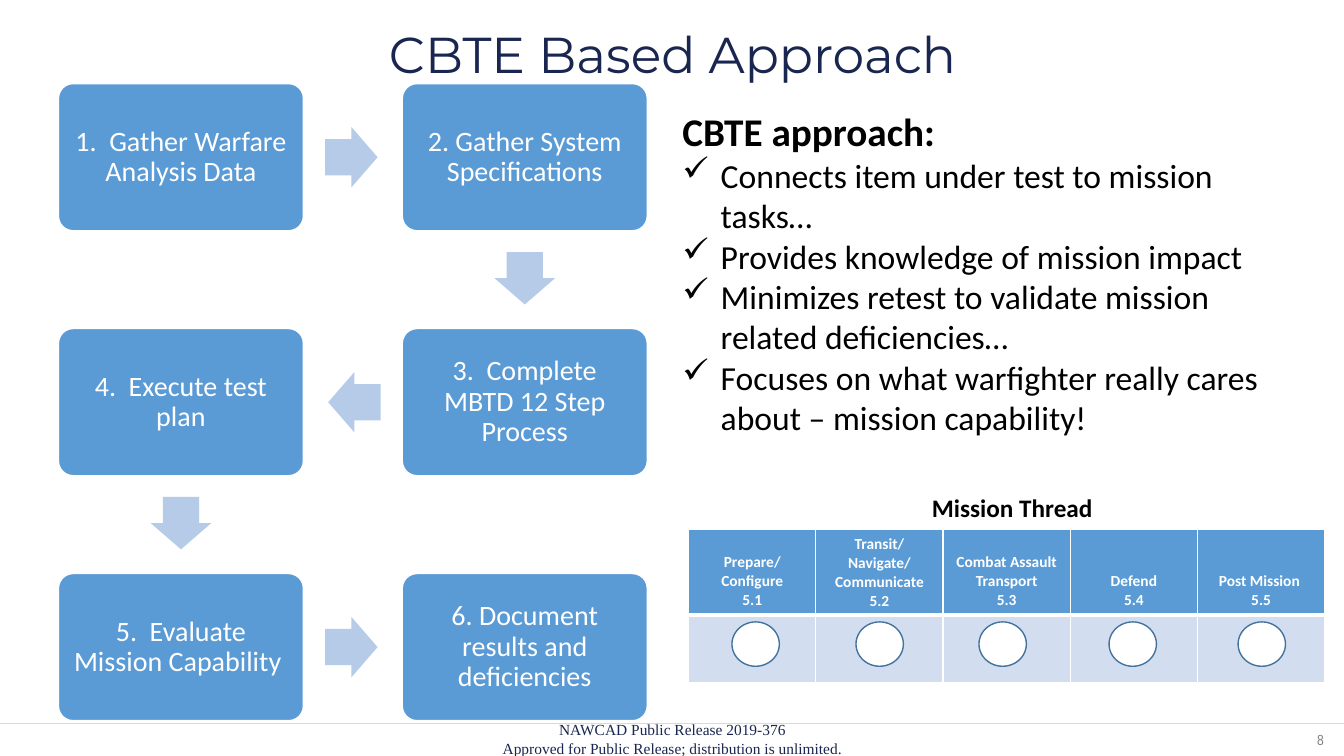
from math import atan2, cos, degrees, radians, sin
from lxml.etree import SubElement
from pptx import Presentation
from pptx.dml.color import RGBColor as RGB
from pptx.enum.shapes import MSO_CONNECTOR as LINE, MSO_SHAPE as SHAPE
from pptx.enum.text import MSO_ANCHOR as ANCHOR, PP_ALIGN as ALIGN
from pptx.oxml.ns import qn
from pptx.util import Inches, Pt

HUES = {
    "navy": "19264F", "blue": "5B9BD5", "arrow": "B5CBE7", "pale": "D2DEEF",
    "ring": "43739E", "rule": "D9D9D9", "gray": "808080",
    "white": "FFFFFF", "black": "000000",
}
STEPS = [
    ("1.  Gather Warfare Analysis Data", 0, 0),
    ("2. Gather System Specifications", 1, 0),
    ("3.  Complete MBTD 12 Step Process", 1, 1),
    ("4.  Execute test plan", 0, 1),
    ("5.  Evaluate Mission Capability ", 0, 2),
    ("6. Document results and deficiencies", 1, 2),
]
GAINS = [
    "Connects item under test to mission tasks…",
    "Provides knowledge of mission impact",
    "Minimizes retest to validate mission related deficiencies…",
    "Focuses on what warfighter really cares about – mission capability!",
]
PHASES = ["Prepare/ Configure", "Transit/ Navigate/ Communicate",
          "Combat Assault Transport", "Defend", "Post Mission "]
RINGS = [0.43, 1.66, 2.88, 4.17, 5.45]


def hue(name):
    return RGB.from_string(HUES[name])


def add_run(para, text, size, color, face="Calibri", bold=False):
    run = para.add_run()
    run.text = text
    font = run.font
    font.name, font.size, font.bold = face, Pt(size), bold
    font.color.rgb = hue(color)


def add_box(slide, box, wrap=True):
    frame = slide.shapes.add_textbox(*map(Inches, box)).text_frame
    frame.word_wrap = wrap
    return frame


def add_form(slide, kind, box, fill, line=None):
    form = slide.shapes.add_shape(kind, *map(Inches, box))
    form.shadow.inherit = False
    form.fill.solid()
    form.fill.fore_color.rgb = hue(fill)
    if line:
        form.line.color.rgb = hue(line)
        form.line.width = Pt(1)
    else:
        form.line.fill.background()
    return form


def add_title(slide, box):
    frame = add_box(slide, box)
    frame.vertical_anchor = ANCHOR.MIDDLE
    para = frame.paragraphs[0]
    para.alignment, para.line_spacing = ALIGN.CENTER, 0.9
    add_run(para, "CBTE Based Approach", 36, "navy", "Montserrat")


def add_step(slide, box, text):
    form = add_form(slide, SHAPE.ROUNDED_RECTANGLE, box, "blue", "white")
    form.adjustments[0] = 0.1
    frame = form.text_frame
    frame.word_wrap = True
    frame.vertical_anchor = ANCHOR.MIDDLE
    frame.margin_left = frame.margin_right = Inches(0.09)
    para = frame.paragraphs[0]
    para.alignment, para.line_spacing = ALIGN.CENTER, 0.9
    add_run(para, text, 20, "white")


def add_arrow(slide, start, end):
    wide, high, back = 0.52, 0.6, 0.015
    turn = atan2(end[1] - start[1], end[0] - start[0])
    mid_x = (start[0] + end[0]) / 2 - back * cos(turn)
    mid_y = (start[1] + end[1]) / 2 - back * sin(turn)
    box = mid_x - wide / 2, mid_y - high / 2, wide, high
    form = add_form(slide, SHAPE.RIGHT_ARROW, box, "arrow")
    form.adjustments[0] = 0.6
    form.rotation = degrees(turn)


def add_flow(slide, box):
    left, top, width, height = box
    wide, high = 2.43, 1.46
    step_x, step_y = width - wide, (height - high) / 2
    last = None
    for text, col, row in STEPS:
        x, y = left + col * step_x, top + row * step_y
        mid = x + wide / 2, y + high / 2
        if last:
            add_arrow(slide, last, mid)
        add_step(slide, (x, y, wide, high), text)
        last = mid


def add_gains(slide, box):
    frame = add_box(slide, box)
    add_run(frame.paragraphs[0], "CBTE approach:", 28, "black", bold=True)
    for gain in GAINS:
        para = frame.add_paragraph()
        props = para._p.get_or_add_pPr()
        props.set("marL", str(Inches(0.38)))
        props.set("indent", str(-Inches(0.38)))
        SubElement(props, qn("a:buChar")).set("char", "✓")
        add_run(para, gain, 24, "black")


def set_edges(cell, widths):
    props = cell._tc.get_or_add_tcPr()
    for spot, (side, width) in enumerate(zip("LRTB", widths)):
        edge = SubElement(props, qn(f"a:ln{side}"))
        edge.set("w", str(Pt(width)))
        fill = SubElement(edge, qn("a:solidFill"))
        SubElement(fill, qn("a:srgbClr")).set("val", HUES["white"])
        props.insert(spot, edge)


def add_thread(slide, box):
    left, top, width, height = box
    head, cap = 0.85, 0.42
    para = add_box(slide, (left + 1.25, top, 3.92, cap)).paragraphs[0]
    para.alignment = ALIGN.CENTER
    add_run(para, "Mission Thread", 18, "black", bold=True)

    area = map(Inches, (left, top + cap, width, height - cap))
    table = slide.shapes.add_table(2, len(PHASES), *area).table
    table.rows[0].height = Inches(head)
    table.rows[1].height = Inches(height - cap - head)
    for col, phase in enumerate(PHASES):
        for row, color in enumerate(("blue", "pale")):
            cell = table.cell(row, col)
            cell.fill.solid()
            cell.fill.fore_color.rgb = hue(color)
            set_edges(cell, (1, 1, 3, 1) if row else (1, 1, 1, 3))
        cell = table.cell(0, col)
        cell.vertical_anchor = ANCHOR.BOTTOM
        frame = cell.text_frame
        for para, text in ((frame.paragraphs[0], phase),
                           (frame.add_paragraph(), f"5.{col + 1}")):
            para.alignment = ALIGN.CENTER
            add_run(para, text, 11, "white", bold=True)
    for x in RINGS:
        ring = left + x, top + cap + head + 0.07, 0.47, 0.44
        add_form(slide, SHAPE.OVAL, ring, "white", "ring")


def add_foot(slide, box):
    left, top, width, height = box
    ends = map(Inches, (left, top + 0.08, left + width, top + 0.08))
    rule = slide.shapes.add_connector(LINE.STRAIGHT, *ends)
    rule.line.color.rgb = hue("rule")
    rule.line.width = Pt(0.5)
    SubElement(rule._element.spPr, qn("a:effectLst"))

    para = add_box(slide, (left + 4.42, top, 4.5, height)).paragraphs[0]
    para.alignment = ALIGN.CENTER
    face = "Times New Roman"
    add_run(para, "NAWCAD Public Release 2019-376", 11, "navy", face)
    para.add_line_break()
    add_run(para, "Approved for Public Release; distribution is unlimited.",
            11, "navy", face)

    spot = left + 12.92, top + 0.1, 0.35, 0.28
    para = add_box(slide, spot, False).paragraphs[0]
    para.alignment = ALIGN.CENTER
    add_run(para, "8", 10.5, "gray", "Arial Narrow")


def main():
    deck = Presentation()
    deck.slide_width, deck.slide_height = Inches(13.33), Inches(7.5)
    slide = deck.slides.add_slide(deck.slide_layouts[6])
    add_title(slide, (1.17, 0.21, 11, 0.71))
    add_flow(slide, (0.58, 0.83, 5.84, 6.32))
    add_thread(slide, (6.83, 4.83, 6.31, 1.94))
    add_gains(slide, (6.67, 1.02, 6.42, 3.4))
    add_foot(slide, (0, 7.1, 13.33, 0.4))
    deck.save("out.pptx")


if __name__ == "__main__":
    main()
